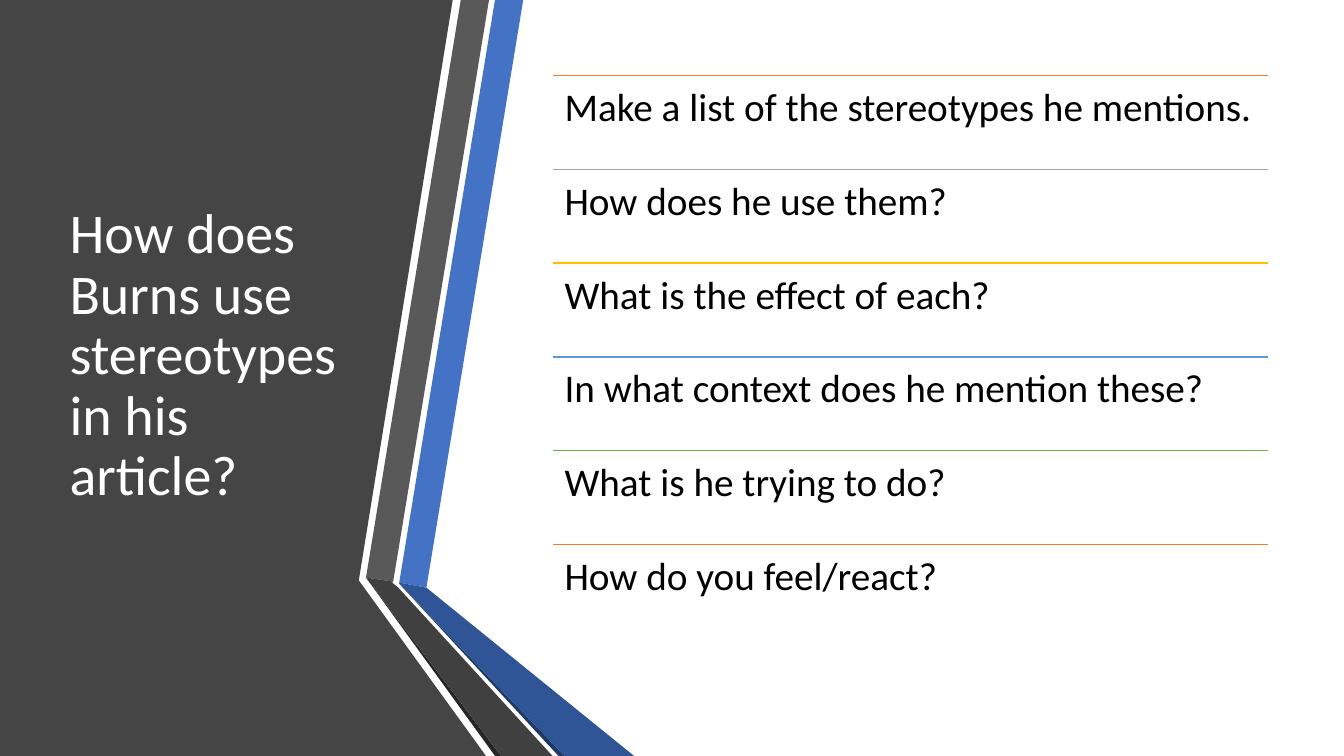
"""Build the slide asking how Burns uses stereotypes."""
from dataclasses import dataclass

from lxml import etree
from pptx import Presentation
from pptx.dml.color import RGBColor
from pptx.enum.shapes import MSO_CONNECTOR
from pptx.enum.text import MSO_ANCHOR, MSO_AUTO_SIZE, PP_ALIGN
from pptx.oxml.ns import qn
from pptx.slide import Slide
from pptx.text.text import TextFrame
from pptx.util import Inches, Pt

STRAIGHT = MSO_CONNECTOR.STRAIGHT
TOP, MIDDLE = MSO_ANCHOR.TOP, MSO_ANCHOR.MIDDLE
LEFT = PP_ALIGN.LEFT
FIXED = MSO_AUTO_SIZE.NONE


@dataclass(frozen=True)
class Theme:
    """Colours, font and type sizes."""
    font: str = "Calibri"
    title: int = 40
    body: int = 28
    white: str = "FFFFFF"
    black: str = "000000"
    panel: str = "454545"
    blue: str = "4472C4"
    navy: str = "2F5597"
    deep: str = "203864"
    grey: str = "595959"
    dark: str = "404040"
    shade: str = "262626"
    orange: str = "ED7D31"
    silver: str = "A5A5A5"
    gold: str = "FFC000"
    sky: str = "5B9BD5"
    green: str = "70AD47"


@dataclass(frozen=True)
class Band:
    """A filled outline given by its corners in inches."""
    fill: str
    points: list[tuple[float, float]]


@dataclass(frozen=True)
class Row:
    """A question under a coloured rule."""
    text: str
    rule: str


THEME = Theme()

BANDS = [
    Band(THEME.panel, [(0, 0), (4.49, 0), (3.56, 5.75), (3.56, 5.76), (4.82, 7.5), (0, 7.5)]),
    Band(THEME.blue, [(3.96, 5.78), (4.23, 5.83), (5.19, 0), (4.91, 0)]),
    Band(THEME.grey, [(4.85, 0), (4.57, 0), (3.63, 5.73), (3.9, 5.77)]),
    Band(THEME.shade, [(3.63, 5.73), (4.91, 7.5), (4.97, 7.5)]),
    Band(THEME.deep, [(3.96, 5.79), (5.54, 7.5), (5.6, 7.5)]),
    Band(THEME.navy, [(3.96, 5.79), (5.6, 7.5), (6.29, 7.5), (4.23, 5.83), (3.96, 5.78)]),
    Band(THEME.dark, [(5.48, 7.5), (3.95, 5.83), (3.89, 5.78), (3.9, 5.77),
                      (3.63, 5.73), (4.97, 7.5)]),
]

ROWS = [
    Row("Make a list of the stereotypes he mentions.", THEME.orange),
    Row("How does he use them?", THEME.silver),
    Row("What is the effect of each?", THEME.gold),
    Row("In what context does he mention these?", THEME.sky),
    Row("What is he trying to do?", THEME.green),
    Row("How do you feel/react?", THEME.orange),
]
ROW_X, ROW_Y, ROW_W, ROW_H = 5.48, 0.75, 7.1, 0.93


def write(frame: TextFrame, text: str, *, size: int, color: str,
          anchor: MSO_ANCHOR = TOP, inset: float = 0.12) -> None:
    """Put one formatted paragraph into a text frame."""
    frame.word_wrap = True
    frame.auto_size = FIXED
    frame.vertical_anchor = anchor
    frame.margin_left = frame.margin_right = Inches(inset)
    frame.margin_top = frame.margin_bottom = Inches(inset)
    para = frame.paragraphs[0]
    para.text = text
    para.alignment = LEFT
    para.line_spacing = 0.9
    font = para.runs[0].font
    font.name = THEME.font
    font.size = Pt(size)
    font.color.rgb = RGBColor.from_string(color)


def draw_band(slide: Slide, band: Band) -> None:
    """Draw one filled outline."""
    points = [(Inches(x), Inches(y)) for x, y in band.points]
    pen = slide.shapes.build_freeform(*points[0])
    pen.add_line_segments(points[1:], close=True)
    shape = pen.convert_to_shape()
    shape.shadow.inherit = False
    shape.fill.solid()
    shape.fill.fore_color.rgb = RGBColor.from_string(band.fill)
    shape.line.fill.background()


def draw_row(slide: Slide, row: Row, top: float) -> None:
    """Draw a rule and the question below it."""
    x, y, width = Inches(ROW_X), Inches(top), Inches(ROW_W)
    rule = slide.shapes.add_connector(STRAIGHT, x, y, x + width, y)
    rule.line.color.rgb = RGBColor.from_string(row.rule)
    rule.line.width = Pt(1)
    etree.SubElement(rule.element.spPr, qn("a:effectLst"))
    box = slide.shapes.add_textbox(x, y, width, Inches(ROW_H))
    write(box.text_frame, row.text, size=THEME.body, color=THEME.black)


def draw_title(slide: Slide) -> None:
    """Place the title in front of the dark panel."""
    title = slide.shapes.title
    title.left, title.top = Inches(0.59), Inches(0.75)
    title.width, title.height = Inches(3.04), Inches(5.58)
    write(title.text_frame, "How does Burns use stereotypes in his article?",
          size=THEME.title, color=THEME.white, anchor=MIDDLE, inset=0.1)
    title.element.getparent().append(title.element)


def main() -> None:
    """Build and save the deck."""
    deck = Presentation()
    deck.slide_width, deck.slide_height = Inches(13.33), Inches(7.5)
    slide = deck.slides.add_slide(deck.slide_layouts.get_by_name("Title Only"))
    for band in BANDS:
        draw_band(slide, band)
    draw_title(slide)
    for i, row in enumerate(ROWS):
        draw_row(slide, row, ROW_Y + i * ROW_H)
    deck.save("out.pptx")


if __name__ == "__main__":
    main()
